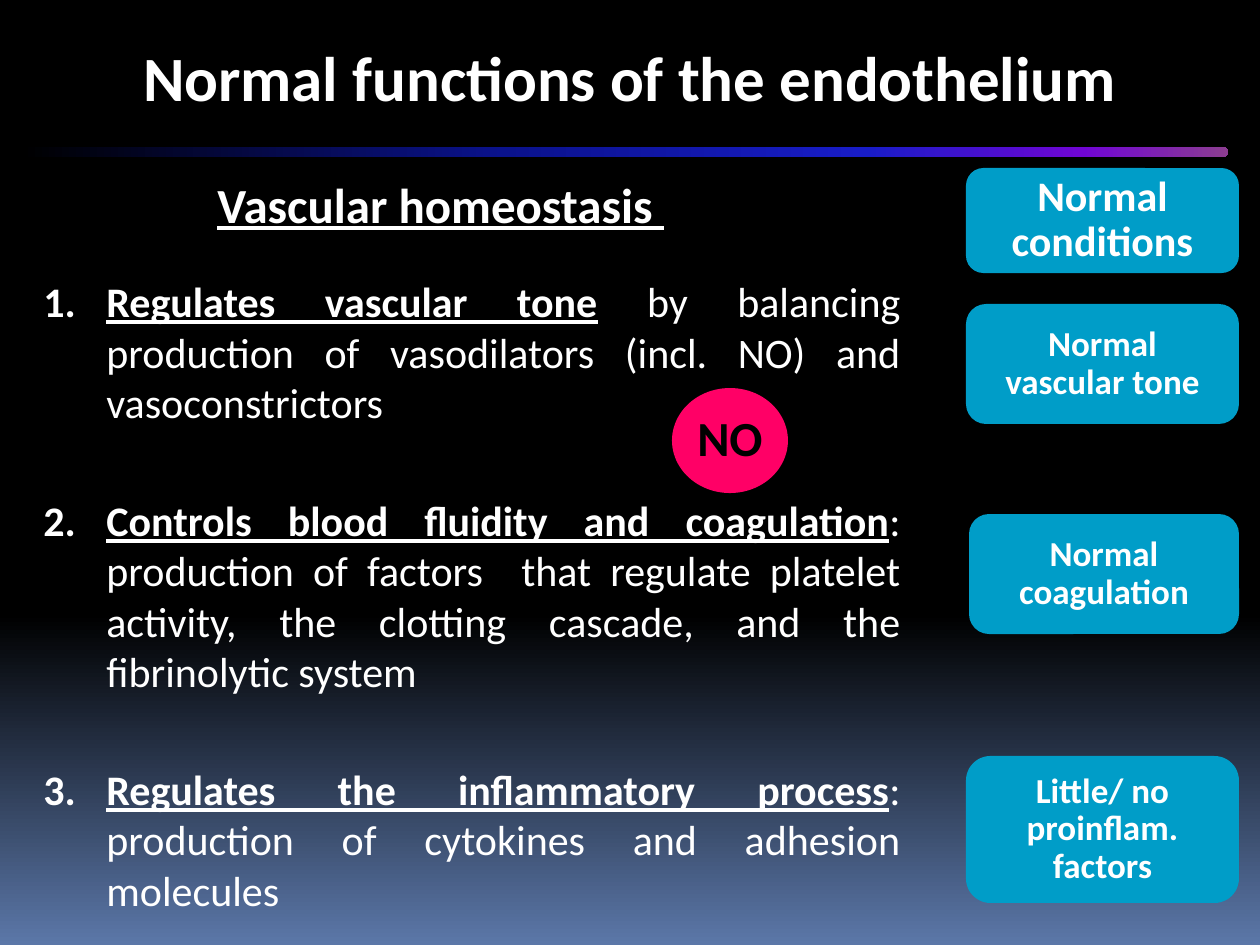
from dataclasses import dataclass

from lxml.etree import SubElement
from pptx import Presentation
from pptx.dml.color import RGBColor
from pptx.enum.shapes import MSO_SHAPE
from pptx.enum.text import MSO_ANCHOR, PP_ALIGN
from pptx.oxml.ns import qn
from pptx.util import Emu, Pt


@dataclass(frozen=True)
class Theme:
    font: str = "Calibri"
    text: str = "FFFFFF"
    dark_text: str = "000000"
    pill: str = "009DC8"
    badge: str = "FF0066"
    backdrop: tuple = ((0, "000000"), (65, "000000"), (100, "5B77A8"))
    rule: tuple = ((0, "000000"), (40, "0A128C"), (70, "181CC7"),
                   (88, "7005D4"), (100, "8C3D91"))
    title_size: int = 36
    heading_size: int = 28
    body_size: int = 24
    pill_size: int = 20


THEME = Theme()
PX_PER_INCH = 126

TITLE = "Normal functions of the endothelium"
HEADING = "Vascular homeostasis "
FUNCTIONS = [
    ("Regulates vascular tone",
     " by balancing production of vasodilators (incl. NO) and vasoconstrictors"),
    ("Controls blood fluidity and coagulation",
     ": production of factors  that regulate platelet activity, "
     "the clotting cascade, and the ﬁbrinolytic system"),
    ("Regulates the inflammatory process",
     ": production of cytokines and adhesion molecules"),
]
OUTCOMES = [
    ("Normal conditions", THEME.body_size, (966, 168, 273, 105)),
    ("Normal vascular tone", THEME.pill_size, (966, 304, 273, 120)),
    ("Normal coagulation", THEME.pill_size, (969, 514, 270, 120)),
    ("Little/ no proinflam. factors", THEME.pill_size, (966, 756, 273, 147)),
]
MOLECULE = "NO"

TITLE_BOX = (32, 32, 1196, 157)
RULE_BOX = (21, 147, 1207, 10)
BODY_BOX = (-32, 168, 945, 714)
MOLECULE_BOX = (672, 388, 116, 105)
ITEM_INDENT, ITEM_HANG = 126, 63
FIRST_GAP, ITEM_GAP = 24.5, 38.5


def px(length):
    return Emu(round(length * 914400 / PX_PER_INCH))


def set_gradient(fill, owner, stops, angle):
    fill.gradient()
    fill.gradient_angle = angle
    stop_list = owner.element.xpath(".//a:gradFill/a:gsLst")[0]
    for stop in list(stop_list):
        stop_list.remove(stop)
    for position, color in stops:
        stop = SubElement(stop_list, qn("a:gs"), pos=str(position * 1000))
        SubElement(stop, qn("a:srgbClr"), val=color)


def add_text(paragraph, text, *, size, color=THEME.text, bold=True,
             underline=False, align=PP_ALIGN.CENTER):
    paragraph.alignment = align
    run = paragraph.add_run()
    run.text = text
    run.font.name = THEME.font
    run.font.size = Pt(size)
    run.font.bold = bold
    run.font.underline = underline
    run.font.color.rgb = RGBColor.from_string(color)


def add_frame(slide, box):
    frame = slide.shapes.add_textbox(*map(px, box)).text_frame
    frame.word_wrap = True
    return frame


def add_plain_shape(slide, kind, box, color=None):
    shape = slide.shapes.add_shape(kind, *map(px, box))
    shape.shadow.inherit = False
    shape.line.fill.background()
    if color:
        shape.fill.solid()
        shape.fill.fore_color.rgb = RGBColor.from_string(color)
    return shape


def set_insets(frame, left, top, right, bottom):
    frame.margin_left, frame.margin_top = px(left), px(top)
    frame.margin_right, frame.margin_bottom = px(right), px(bottom)
    frame.vertical_anchor = MSO_ANCHOR.MIDDLE


def number_item(paragraph):
    paragraph.level = 1
    properties = paragraph._p.get_or_add_pPr()
    properties.set("marL", str(px(ITEM_INDENT)))
    properties.set("indent", str(-px(ITEM_HANG)))
    SubElement(properties, qn("a:buFont"), typeface=THEME.font)
    SubElement(properties, qn("a:buAutoNum"), type="arabicPeriod")


def add_functions(slide):
    body = add_frame(slide, BODY_BOX)
    add_text(body.paragraphs[0], HEADING, size=THEME.heading_size, underline=True)
    for index, (key_phrase, detail) in enumerate(FUNCTIONS):
        item = body.add_paragraph()
        item.space_before = Pt(ITEM_GAP if index else FIRST_GAP)
        number_item(item)
        add_text(item, key_phrase, size=THEME.body_size, underline=True,
                 align=PP_ALIGN.JUSTIFY)
        add_text(item, detail, size=THEME.body_size, bold=False,
                 align=PP_ALIGN.JUSTIFY)


def add_outcome(slide, label, size, box):
    pill = add_plain_shape(slide, MSO_SHAPE.ROUNDED_RECTANGLE, box, THEME.pill)
    frame = pill.text_frame
    frame.word_wrap = True
    set_insets(frame, 18, 6, 18, 6)
    frame.paragraphs[0].line_spacing = 0.9
    add_text(frame.paragraphs[0], label, size=size)


def add_molecule(slide):
    badge = add_plain_shape(slide, MSO_SHAPE.OVAL, MOLECULE_BOX, THEME.badge)
    frame = badge.text_frame
    frame.word_wrap = False
    set_insets(frame, 0, 0, 0, 7)
    add_text(frame.paragraphs[0], MOLECULE, size=THEME.heading_size,
             color=THEME.dark_text)


def main():
    deck = Presentation()
    deck.slide_width, deck.slide_height = px(1260), px(945)
    slide = deck.slides.add_slide(deck.slide_layouts[6])
    set_gradient(slide.background.fill, slide, THEME.backdrop, 270)

    title = add_frame(slide, TITLE_BOX)
    add_text(title.paragraphs[0], TITLE, size=THEME.title_size)
    rule = add_plain_shape(slide, MSO_SHAPE.ROUNDED_RECTANGLE, RULE_BOX)
    rule.adjustments[0] = 0.5
    set_gradient(rule.fill, rule, THEME.rule, 0)

    add_functions(slide)
    for outcome in OUTCOMES:
        add_outcome(slide, *outcome)
    add_molecule(slide)
    deck.save("out.pptx")


if __name__ == "__main__":
    main()
